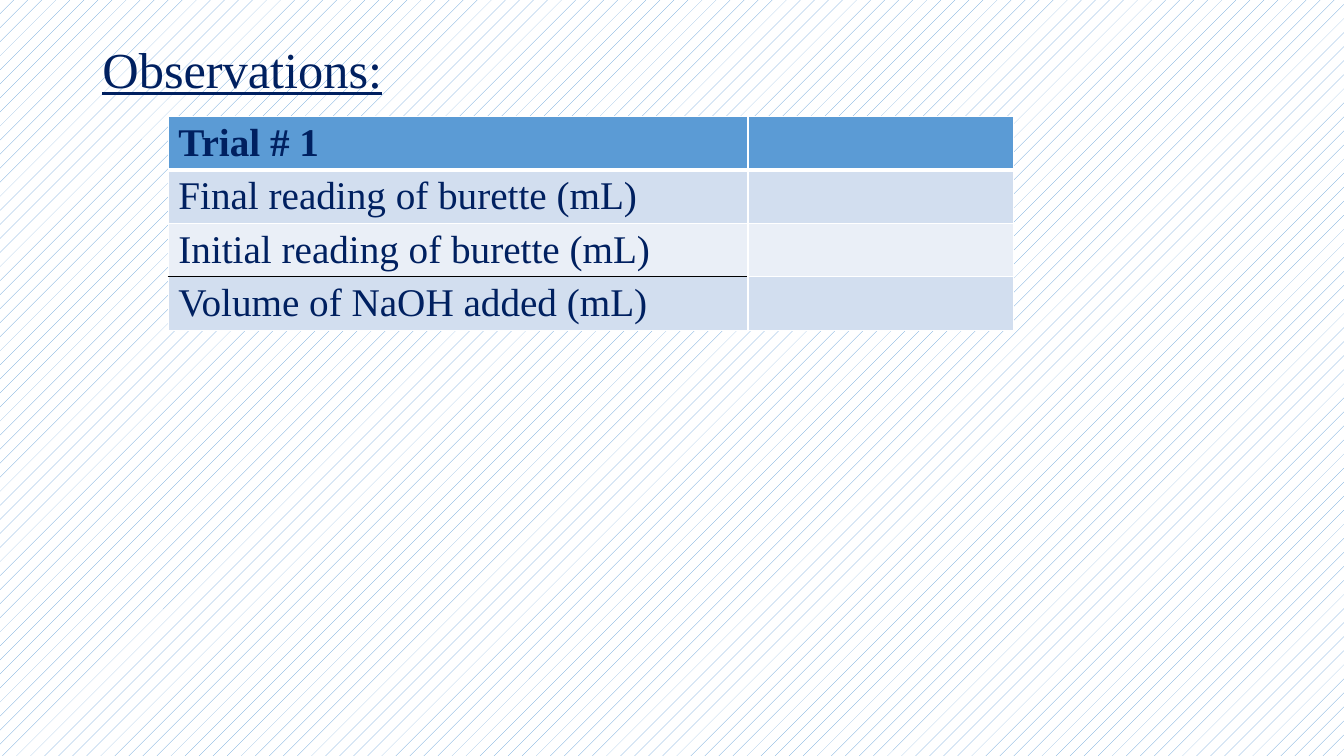
"""Build the titration observations slide."""
from dataclasses import dataclass

from lxml import etree
from pptx import Presentation
from pptx.dml.color import RGBColor
from pptx.enum.dml import MSO_PATTERN
from pptx.enum.text import MSO_ANCHOR, MSO_AUTO_SIZE, PP_ALIGN
from pptx.oxml.ns import qn
from pptx.util import Pt

DOTS = MSO_PATTERN.PERCENT_5
MIDDLE = MSO_ANCHOR.MIDDLE
FIXED = MSO_AUTO_SIZE.NONE
LEFT = PP_ALIGN.LEFT


@dataclass(frozen=True)
class Theme:
    """Colours, font and type sizes."""
    font: str = "Times New Roman"
    ink: str = "002060"
    head: str = "5B9BD5"
    bands: tuple = ("D2DEEF", "EAEFF7")
    white: str = "FFFFFF"
    black: str = "000000"
    title: int = 36
    body: int = 28


class Deck:
    """Draws styled elements on the current slide."""

    def __init__(self, show, theme):
        """Add a title slide to the show."""
        self.theme = theme
        self.slide = show.slides.add_slide(show.slide_layouts[5])

    def ground(self):
        """Fill the background with the pattern."""
        fill = self.slide.background.fill
        fill.patterned()
        fill.pattern = DOTS
        fill.fore_color.rgb = RGBColor.from_string(self.theme.head)
        fill.back_color.rgb = RGBColor.from_string(self.theme.white)

    def label(self, para, text, size, bold=False, under=False):
        """Add one styled run."""
        run = para.add_run()
        run.text = text
        font = run.font
        font.name, font.size = self.theme.font, Pt(size)
        font.bold, font.underline = bold, under
        font.color.rgb = RGBColor.from_string(self.theme.ink)

    def title(self, text, left, top, width, height):
        """Place and fill the title."""
        shape = self.slide.shapes.title
        shape.left, shape.top = Pt(left), Pt(top)
        shape.width, shape.height = Pt(width), Pt(height)
        frame = shape.text_frame
        frame.auto_size, frame.vertical_anchor = FIXED, MIDDLE
        para = frame.paragraphs[0]
        para.alignment, para.line_spacing = LEFT, 0.9
        self.label(para, text, self.theme.title, under=True)

    def edges(self, cell, sides):
        """Draw the cell borders, given as side: (colour, width)."""
        props = cell._tc.get_or_add_tcPr()
        for spot, side in enumerate("LRTB"):
            tint, width = sides.get(side, (self.theme.white, 1))
            line = etree.Element(qn(f"a:ln{side}"), w=str(Pt(width)))
            fill = etree.SubElement(line, qn("a:solidFill"))
            etree.SubElement(fill, qn("a:srgbClr"), val=tint)
            props.insert(spot, line)

    def table(self, names, left, top, widths, height, ruled):
        """Add a table of row names with a header and a rule below one row."""
        theme = self.theme
        frame = self.slide.shapes.add_table(
            len(names), len(widths), Pt(left), Pt(top),
            Pt(sum(widths)), Pt(height * len(names)))
        grid = frame.table
        for col, width in zip(grid.columns, widths):
            col.width = Pt(width)
        for row, name in enumerate(names):
            grid.rows[row].height = Pt(height)
            tint = theme.bands[(row - 1) % 2] if row else theme.head
            for col in range(len(widths)):
                cell = grid.cell(row, col)
                cell.fill.solid()
                cell.fill.fore_color.rgb = RGBColor.from_string(tint)
                sides = {}
                if row == 0:
                    sides["B"] = (theme.white, 3)
                elif row == 1:
                    sides["T"] = (theme.white, 3)
                if col == 0 and row == ruled:
                    sides["B"] = (theme.black, 1)
                elif col == 0 and row == ruled + 1:
                    sides["T"] = (theme.black, 1)
                self.edges(cell, sides)
            para = grid.cell(row, 0).text_frame.paragraphs[0]
            self.label(para, name, theme.body, bold=row == 0)


def main():
    """Build and save the slide."""
    show = Presentation()
    show.slide_width, show.slide_height = Pt(960), Pt(540)
    deck = Deck(show, Theme())
    deck.ground()
    deck.title("Observations:", 66, 28.75, 828, 45)
    names = ["Trial # 1", "Final reading of burette (mL)",
             "Initial reading of burette (mL)", "Volume of NaOH added (mL)"]
    deck.table(names, 120.25, 83, (414, 190), 38, ruled=2)
    show.save("out.pptx")


if __name__ == "__main__":
    main()
